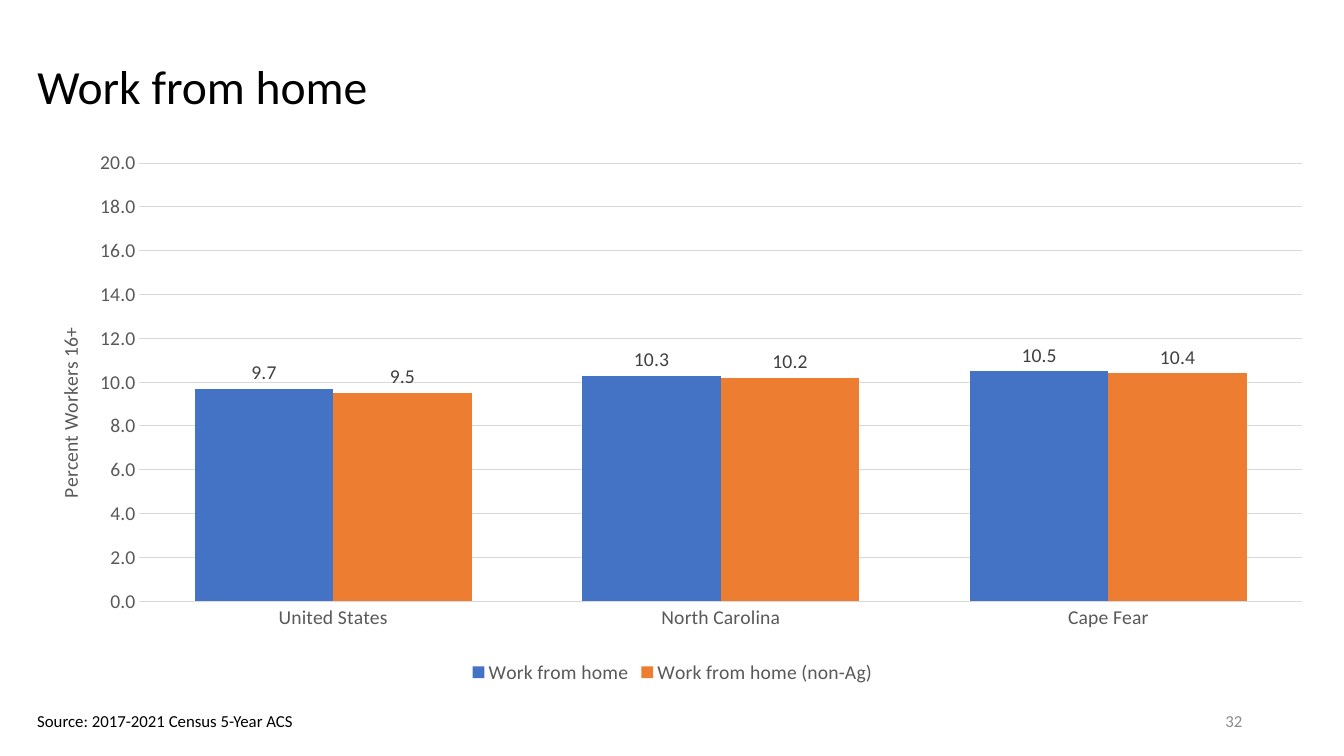
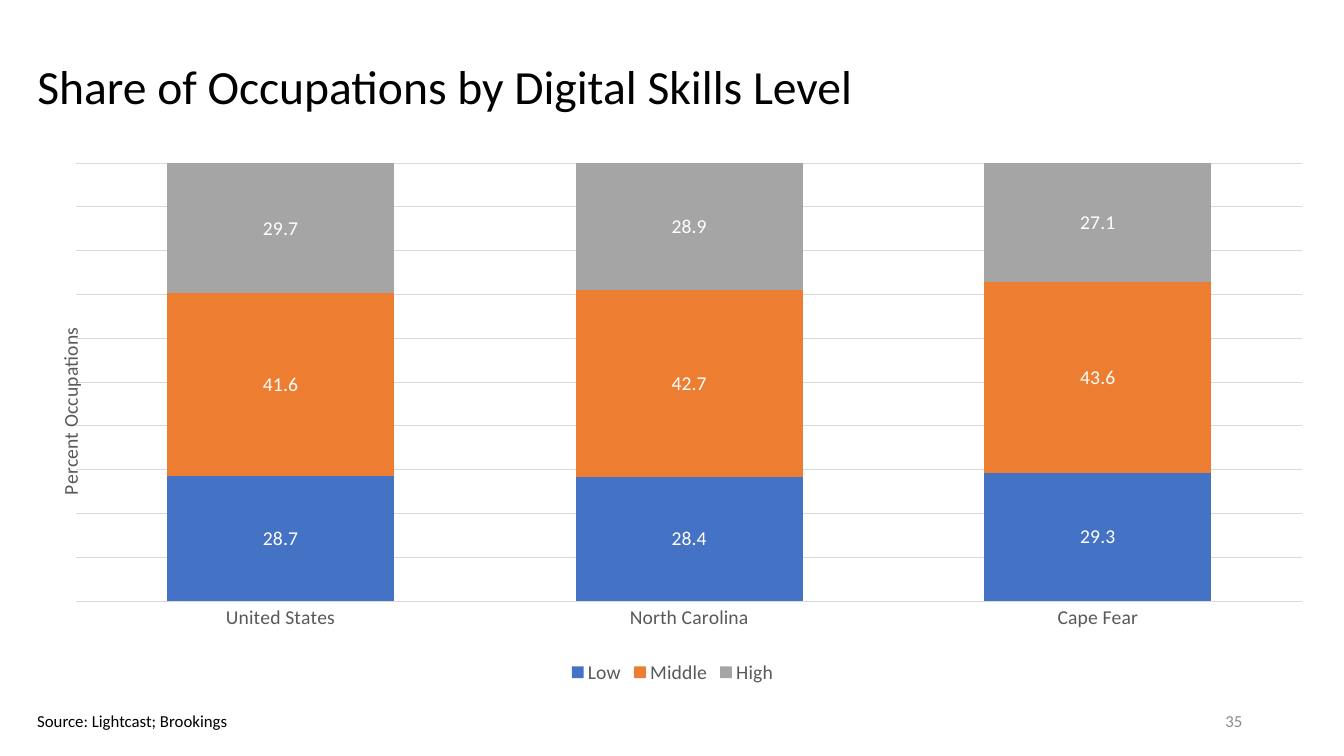
from dataclasses import dataclass

import pptx
import pptx.chart.data
import pptx.dml.color
import pptx.enum.chart
import pptx.enum.text
import pptx.oxml
import pptx.oxml.ns
import pptx.util
from pptx.util import Inches

Kind = pptx.enum.chart.XL_CHART_TYPE
Label = pptx.enum.chart.XL_LABEL_POSITION
Tick = pptx.enum.chart.XL_TICK_MARK
Align = pptx.enum.text.PP_ALIGN
Anchor = pptx.enum.text.MSO_ANCHOR
Fit = pptx.enum.text.MSO_AUTO_SIZE


@dataclass(frozen=True)
class Theme:
    face: str = "Calibri"
    ink: str = "000000"
    page: str = "8C8C8C"
    axis: str = "595959"
    grid: str = "D9D9D9"
    bars: tuple[str, ...] = ("4472C4", "ED7D31", "A5A5A5")
    title: int = 34
    small: int = 12
    chart: int = 14
    rule: float = 0.75


THEME = Theme()
LEFT = 0.27
PLACES = ("United States", "North Carolina", "Cape Fear")


@dataclass(frozen=True)
class Panel:
    """One slide: its title, footer and column chart."""
    title: str
    page: str
    source: str
    width: float
    kind: Kind
    axis: str
    series: dict[str, tuple[float, ...]]
    plot: dict[str, float]
    label: str
    spot: Label
    overlap: int = 0
    top: float | None = None


PANELS = (
    Panel("Work from home", "32", "Source: 2017-2021 Census 5-Year ACS", 2.78,
          Kind.COLUMN_CLUSTERED, "Percent Workers 16+",
          {"Work from home": (9.7, 10.3, 10.5),
           "Work from home (non-Ag)": (9.5, 10.2, 10.4)},
          {"x": 0.087, "y": 0.035, "w": 0.901, "h": 0.805},
          "404040", Label.OUTSIDE_END, top=20),
    Panel("Share of Occupations by Digital Skills Level", "35",
          "Source: Lightcast; Brookings", 2.11,
          Kind.COLUMN_STACKED_100, "Percent Occupations",
          {"Low": (28.7, 28.4, 29.3),
           "Middle": (41.6, 42.7, 43.6),
           "High": (29.7, 28.9, 27.1)},
          {"x": 0.038, "y": 0.035, "w": 0.95, "h": 0.805},
          "FFFFFF", Label.CENTER, overlap=100),
)


def rgb(code: str) -> pptx.dml.color.RGBColor:
    return pptx.dml.color.RGBColor.from_string(code)


def style(font, size: int, color: str) -> None:
    font.name = THEME.face
    font.size = pptx.util.Pt(size)
    font.bold = False
    font.color.rgb = rgb(color)


def write(frame, text: str, *, size: int = THEME.small, color: str = THEME.ink,
          align: Align = Align.LEFT, anchor: Anchor = Anchor.TOP,
          wrap: bool = True, fit: Fit = Fit.NONE, space: float = 1.0) -> None:
    frame.word_wrap = wrap
    frame.auto_size = fit
    frame.vertical_anchor = anchor
    para = frame.paragraphs[0]
    para.alignment = align
    para.line_spacing = space
    run = para.add_run()
    run.text = text
    style(run.font, size, color)


def box(slide, left: float, top: float, width: float, height: float):
    shape = slide.shapes.add_textbox(
        Inches(left), Inches(top), Inches(width), Inches(height))
    return shape.text_frame


def place(node, index: int, spots: dict[str, float], inner: bool = False) -> None:
    """Give a chart part a manual layout, in fractions of the chart."""
    old = node.find(pptx.oxml.ns.qn("c:layout"))
    if old is not None:
        node.remove(old)
    target = '<c:layoutTarget val="inner"/>' if inner else ""
    modes = "".join(f'<c:{key}Mode val="edge"/>' for key in ("x", "y"))
    sizes = "".join(f'<c:{key} val="{val}"/>' for key, val in spots.items())
    node.insert(index, pptx.oxml.parse_xml(
        f'<c:layout {pptx.oxml.ns.nsdecls("c")}><c:manualLayout>'
        f"{target}{modes}{sizes}</c:manualLayout></c:layout>"))


def rule(line) -> None:
    line.color.rgb = rgb(THEME.grid)
    line.width = pptx.util.Pt(THEME.rule)


def set_axes(chart, panel: Panel) -> None:
    cat, val = chart.category_axis, chart.value_axis
    for axis in (cat, val):
        axis.major_tick_mark = axis.minor_tick_mark = Tick.NONE
        style(axis.tick_labels.font, THEME.chart, THEME.axis)
    rule(cat.format.line)
    val.has_major_gridlines = True
    rule(val.major_gridlines.format.line)
    val.format.line.fill.background()
    val.tick_labels.number_format = "0.0"
    val.tick_labels.number_format_is_linked = False
    if panel.top is None:
        val.visible = False
    else:
        val.minimum_scale, val.maximum_scale = 0, panel.top

    title = val.axis_title
    frame = title.text_frame
    run = frame.paragraphs[0].add_run()
    run.text = panel.axis
    style(run.font, THEME.chart, THEME.axis)
    body = frame._txBody.find(pptx.oxml.ns.qn("a:bodyPr"))
    body.set("rot", "-5400000")
    body.set("vert", "horz")
    place(title._element, 1, {"x": 0.02, "y": 0.33})


def draw_chart(slide, panel: Panel) -> None:
    data = pptx.chart.data.CategoryChartData(number_format="0.0")
    data.categories = PLACES
    for name, vals in panel.series.items():
        data.add_series(name, vals)
    chart = slide.shapes.add_chart(
        panel.kind, Inches(LEFT), Inches(1.43), Inches(12.8), Inches(5.4),
        data).chart
    style(chart.font, THEME.chart, THEME.ink)
    chart.has_title = False
    chart.has_legend = True
    chart.legend.position = pptx.enum.chart.XL_LEGEND_POSITION.BOTTOM
    chart.legend.include_in_layout = False
    style(chart.legend.font, THEME.chart, THEME.axis)

    plot = chart.plots[0]
    plot.gap_width = 80
    plot.overlap = panel.overlap
    plot.vary_by_categories = False
    for series, color in zip(plot.series, THEME.bars):
        series.format.fill.solid()
        series.format.fill.fore_color.rgb = rgb(color)
        series.invert_if_negative = False
        labels = series.data_labels
        labels.show_value = True
        labels.number_format = "0.0"
        labels.number_format_is_linked = False
        labels.position = panel.spot
        style(labels.font, THEME.chart, panel.label)
    set_axes(chart, panel)
    area = chart._chartSpace.find(".//" + pptx.oxml.ns.qn("c:plotArea"))
    place(area, 0, panel.plot, inner=True)


def draw_slide(deck, panel: Panel) -> None:
    slide = deck.slides.add_slide(deck.slide_layouts[5])
    title = slide.shapes.title
    title.left, title.top = Inches(LEFT), Inches(0.34)
    title.width, title.height = Inches(12.76), Inches(1.09)
    write(title.text_frame, panel.title, size=THEME.title,
          anchor=Anchor.MIDDLE, space=0.9)
    write(box(slide, 9.42, 6.95, 3, 0.4), panel.page, color=THEME.page,
          align=Align.RIGHT, anchor=Anchor.MIDDLE)
    write(box(slide, LEFT, 7, panel.width, 0.3), panel.source, wrap=False,
          fit=Fit.SHAPE_TO_FIT_TEXT)
    draw_chart(slide, panel)


def main() -> None:
    deck = pptx.Presentation()
    deck.slide_width, deck.slide_height = Inches(13.33), Inches(7.5)
    for panel in PANELS:
        draw_slide(deck, panel)
    deck.save("out.pptx")


if __name__ == "__main__":
    main()
